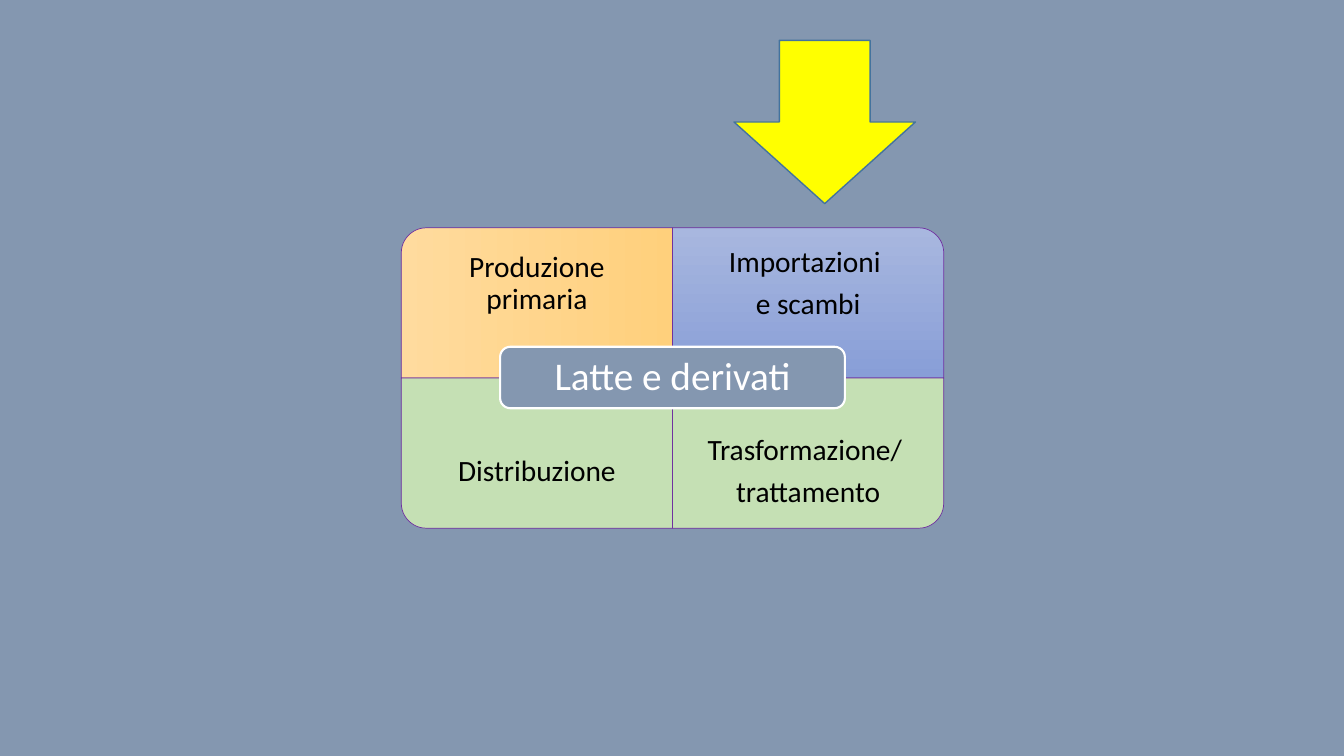
"""Build a slide with a four-part matrix on milk and dairy products."""
from pptx import Presentation
from pptx.dml.color import RGBColor
from pptx.enum.shapes import MSO_SHAPE
from pptx.enum.text import MSO_ANCHOR, PP_ALIGN
from pptx.util import Inches, Pt

ROUND_ONE = MSO_SHAPE.ROUND_1_RECTANGLE
ROUNDED = MSO_SHAPE.ROUNDED_RECTANGLE
DOWN_ARROW = MSO_SHAPE.DOWN_ARROW
MIDDLE = MSO_ANCHOR.MIDDLE
CENTER = PP_ALIGN.CENTER

BACKGROUND = "8497B0"
GREEN = ["C5E0B4"]
CELL_WIDTH, CELL_HEIGHT, TEXT_HEIGHT = 2.69, 1.49, 1.12
MATRIX_LEFT, MATRIX_TOP = 3.98, 2.26


def color(value):
    return RGBColor.from_string(value)


def add_panel(kind, box, colors, line_color, line_width, rotation=0):
    shape = slide.shapes.add_shape(kind, *map(Inches, box))
    shape.shadow.inherit = False
    shape.rotation = rotation
    if len(colors) == 1:
        shape.fill.solid()
        shape.fill.fore_color.rgb = color(colors[0])
    else:
        shape.fill.gradient()
        shape.fill.gradient_angle = 270
        for stop, value in zip(shape.fill.gradient_stops, colors):
            stop.color.rgb = color(value)
    shape.line.color.rgb = color(line_color)
    shape.line.width = Pt(line_width)


presentation = Presentation()
presentation.slide_width = Inches(13.33)
presentation.slide_height = Inches(7.5)
slide = presentation.slides.add_slide(presentation.slide_layouts[6])
slide.background.fill.solid()
slide.background.fill.fore_color.rgb = color(BACKGROUND)

cells = [
    (0, 0, 270, ["FFDB9E", "FFD07C"], ["Produzione primaria"]),
    (0, 1, 0, ["A8B7DF", "889ED7"], ["Importazioni ", "e scambi"]),
    (1, 0, 180, GREEN, ["Distribuzione"]),
    (1, 1, 90, GREEN, ["Trasformazione/ ", "trattamento"]),
]
labels = []
for row, column, rotation, colors, lines in cells:
    left = MATRIX_LEFT + column * CELL_WIDTH
    top = MATRIX_TOP + row * CELL_HEIGHT
    width, height = CELL_WIDTH, CELL_HEIGHT
    if rotation in (90, 270):
        width, height = height, width
    box = (left + (CELL_WIDTH - width) / 2, top + (CELL_HEIGHT - height) / 2, width, height)
    add_panel(ROUND_ONE, box, colors, "7030A0", 0.5, rotation)
    text_top = top + row * (CELL_HEIGHT - TEXT_HEIGHT)
    labels.append(((left, text_top, CELL_WIDTH, TEXT_HEIGHT), lines, 21, "000000", 0.16))

add_panel(ROUNDED, (4.96, 3.44, 3.42, 0.61), [BACKGROUND], "FFFFFF", 1.5)
labels.append(((4.99, 3.47, 3.36, 0.55), ["Latte e derivati"], 28, "FFFFFF", 0.12))

for box, lines, size, text_color, inset in labels:
    frame = slide.shapes.add_textbox(*map(Inches, box)).text_frame
    frame_format = {"word_wrap": True, "vertical_anchor": MIDDLE}
    for side in ("left", "top", "right", "bottom"):
        frame_format[f"margin_{side}"] = Inches(inset)
    for name, value in frame_format.items():
        setattr(frame, name, value)
    frame.text = "\n".join(lines)
    for paragraph in frame.paragraphs:
        paragraph_format = {"alignment": CENTER, "line_spacing": 0.9, "space_after": Pt(size * 0.35)}
        for name, value in paragraph_format.items():
            setattr(paragraph, name, value)
        font = paragraph.runs[0].font
        font.name = "Calibri"
        font.size = Pt(size)
        font.color.rgb = color(text_color)

add_panel(DOWN_ARROW, (7.28, 0.4, 1.8, 1.62), ["FFFF00"], "43739E", 1)

presentation.save("out.pptx")
